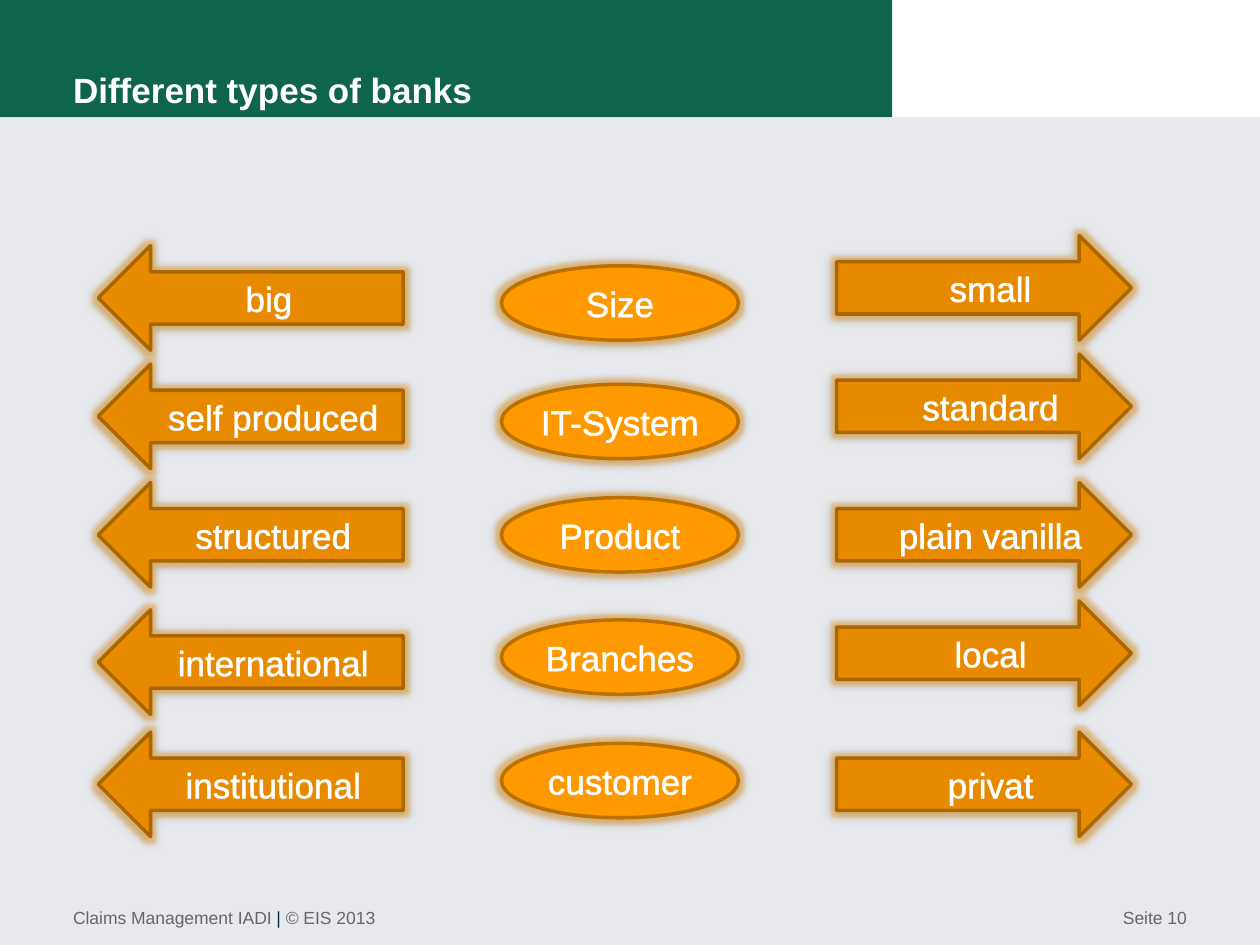
from dataclasses import dataclass

import pptx
import pptx.dml.color
import pptx.enum.shapes
import pptx.enum.text
import pptx.oxml
import pptx.oxml.ns
import pptx.util

Inches = pptx.util.Inches
Pt = pptx.util.Pt
Preset = pptx.enum.shapes.MSO_SHAPE
Align = pptx.enum.text.PP_ALIGN
Anchor = pptx.enum.text.MSO_ANCHOR


@dataclass(frozen=True)
class Theme:
    font: str = "Arial"
    heading_size: int = 20
    label_size: int = 20
    footer_size: int = 10
    background: str = "E7E9EC"
    header: str = "FEFFFF"
    header_accent: str = "0E654B"
    white: str = "FFFFFF"
    shadow: str = "000000"
    footer: str = "666666"
    divider: str = "003142"
    topic: str = "FF9900"
    topic_line: str = "BD7100"
    arrow: str = "E78A00"
    arrow_line: str = "AB6600"


THEME = Theme()

BIG_INSETS = (0.12, 0.04, 0.04, 0.04)
LEFT_INSETS = (0.19, 0.04, 0.04, 0.04)
RIGHT_INSETS = (0.35, 0.04, 0.04, 0.04)
TOPIC_INSETS = (0, 0.04, 0, 0.04)

LEFT_ARROWS = [
    ("big", 1.95, BIG_INSETS),
    ("self produced", 2.89, LEFT_INSETS),
    ("structured", 3.83, LEFT_INSETS),
    ("international", 4.84, LEFT_INSETS),
    ("institutional", 5.81, LEFT_INSETS),
]
TOPICS = [
    ("Size", 2.11),
    ("IT-System", 3.05),
    ("Product", 3.95),
    ("Branches", 4.92),
    ("customer", 5.9),
]
RIGHT_ARROWS = [
    ("small", 1.87),
    ("standard", 2.81),
    ("plain vanilla", 3.83),
    ("local", 4.77),
    ("privat", 5.81),
]


def rgb(value):
    return pptx.dml.color.RGBColor.from_string(value)


def parse_drawing(tag, content):
    namespace = pptx.oxml.ns.nsdecls("a")
    return pptx.oxml.parse_xml(f"<a:{tag} {namespace}>{content}</a:{tag}>")


def write_text(shape, *runs, size, bold=False, align=Align.LEFT, anchor=Anchor.TOP,
               insets=(0, 0, 0, 0), line_spacing=None, outline=None, wrap=True):
    frame = shape.text_frame
    frame.word_wrap = wrap
    frame.auto_size = pptx.enum.text.MSO_AUTO_SIZE.NONE
    frame.vertical_anchor = anchor
    frame.margin_left, frame.margin_top, frame.margin_right, frame.margin_bottom = map(Inches, insets)
    paragraph = frame.paragraphs[0]
    paragraph.alignment = align
    paragraph.line_spacing = line_spacing
    for text, color in runs:
        run = paragraph.add_run()
        run.text = text
        run.font.name = THEME.font
        run.font.size = Pt(size)
        run.font.bold = bold
        run.font.color.rgb = rgb(color)
        if outline:
            stroke = parse_drawing("ln", f'<a:solidFill><a:srgbClr val="{outline}"/></a:solidFill>')
            stroke.set("w", str(Pt(1.45)))
            run._r.get_or_add_rPr().insert(0, stroke)


def add_band(slide, width, color):
    band = slide.shapes.add_shape(Preset.RECTANGLE, 0, 0, Inches(width), Inches(0.93))
    band.shadow.inherit = False
    band.fill.solid()
    band.fill.fore_color.rgb = rgb(color)
    band.line.fill.background()


def add_title(slide, text):
    title = slide.shapes.title
    title.left, title.top, title.width, title.height = map(Inches, (0.58, 0, 6.49, 0.88))
    write_text(title, (text, THEME.white), size=THEME.heading_size, bold=True,
               anchor=Anchor.BOTTOM, line_spacing=Pt(24))
    title.element.getparent().append(title.element)


def add_footer(slide, left, width, *runs, align=Align.LEFT):
    footer = slide.shapes.add_textbox(Inches(left), Inches(7.2), Inches(width), Inches(0.3))
    write_text(footer, *runs, size=THEME.footer_size, align=align)


def add_glow(shape, color):
    effects = parse_drawing(
        "effectLst",
        f'<a:glow rad="{Pt(5)}"><a:srgbClr val="{color}"><a:alpha val="40000"/></a:srgbClr></a:glow>'
        f'<a:outerShdw blurRad="{Pt(6)}" dist="{Pt(1)}" dir="8100000" algn="tr" rotWithShape="0">'
        f'<a:srgbClr val="{THEME.shadow}"><a:alpha val="20000"/></a:srgbClr></a:outerShdw>')
    shape.element.spPr.append(effects)


def add_label(slide, preset, text, left, top, width, height, fill, line, insets, wrap=True):
    label = slide.shapes.add_shape(preset, *map(Inches, (left, top, width, height)))
    label.fill.solid()
    label.fill.fore_color.rgb = rgb(fill)
    label.line.color.rgb = rgb(line)
    label.line.width = Pt(2)
    add_glow(label, THEME.arrow)
    write_text(label, (text, THEME.white), size=THEME.label_size, align=Align.CENTER,
               anchor=Anchor.MIDDLE, insets=insets, outline=THEME.white, wrap=wrap)


def main():
    deck = pptx.Presentation()
    deck.slide_width, deck.slide_height = Inches(10), Inches(7.5)
    slide = deck.slides.add_slide(deck.slide_layouts.get_by_name("Title Only"))
    slide.background.fill.solid()
    slide.background.fill.fore_color.rgb = rgb(THEME.background)

    add_band(slide, 10, THEME.header)
    add_band(slide, 7.08, THEME.header_accent)
    add_footer(slide, 5.92, 3.5, ("Seite 10", THEME.footer), align=Align.RIGHT)
    add_footer(slide, 0.58, 6, ("Claims Management IADI ", THEME.footer),
               ("| ", THEME.divider), ("© EIS 2013", THEME.footer))
    add_title(slide, "Different types of banks")

    for text, top, insets in LEFT_ARROWS:
        add_label(slide, Preset.LEFT_ARROW, text, 0.78, top, 2.42, 0.83,
                  THEME.arrow, THEME.arrow_line, insets)
    for text, top in TOPICS:
        add_label(slide, Preset.OVAL, text, 3.98, top, 1.88, 0.59,
                  THEME.topic, THEME.topic_line, TOPIC_INSETS, wrap=False)
    for text, top in RIGHT_ARROWS:
        add_label(slide, Preset.RIGHT_ARROW, text, 6.64, top, 2.34, 0.83,
                  THEME.arrow, THEME.arrow_line, RIGHT_INSETS)

    deck.save("out.pptx")


if __name__ == "__main__":
    main()
